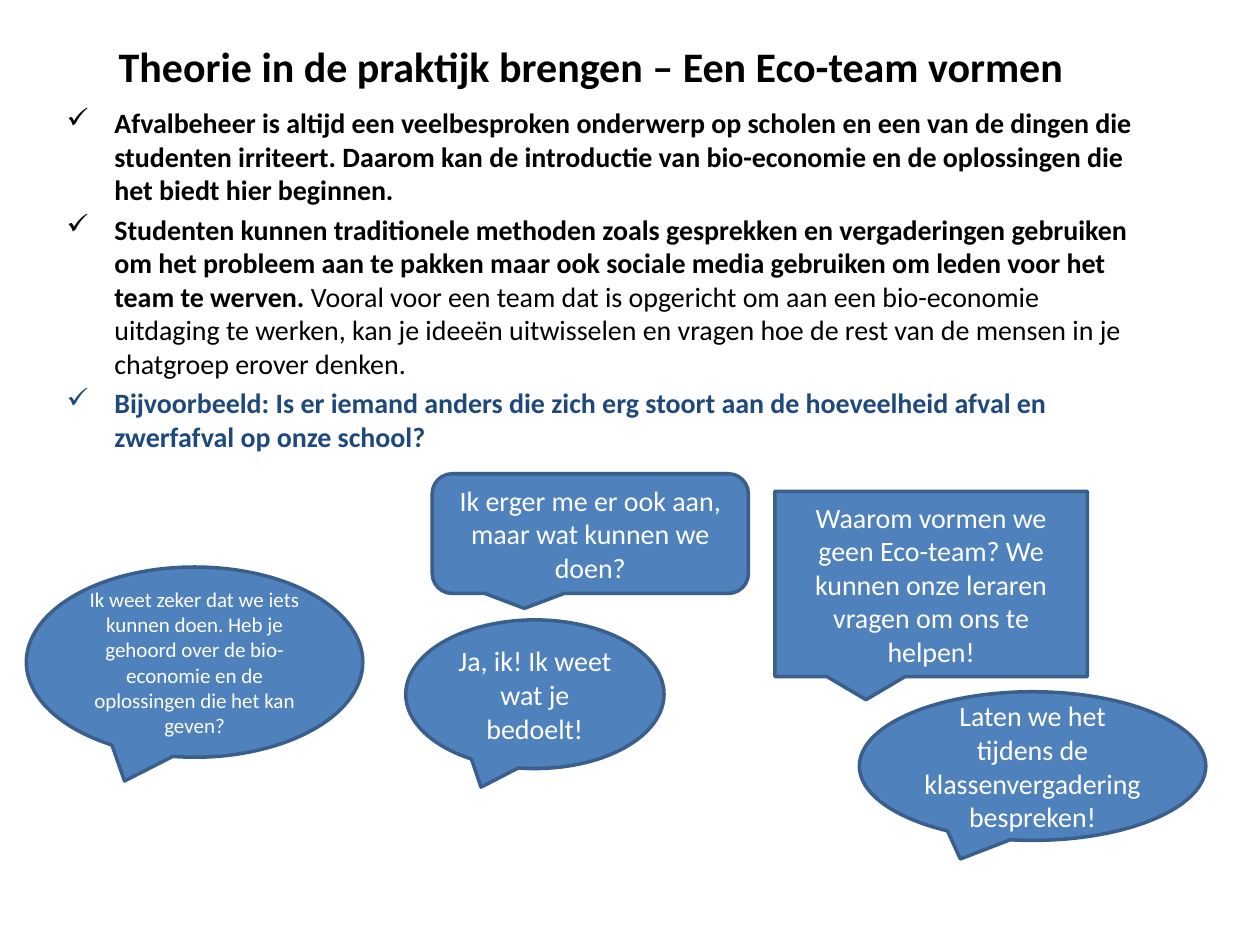
import pptx
import pptx.util
import pptx.dml.color
import pptx.enum.shapes
import pptx.enum.text
import pptx.oxml.ns
import lxml.etree

Inches, Pt = pptx.util.Inches, pptx.util.Pt
RGB = pptx.dml.color.RGBColor
KIND = pptx.enum.shapes.MSO_SHAPE
ALIGN = pptx.enum.text.PP_ALIGN
ANCHOR = pptx.enum.text.MSO_ANCHOR

BLACK = RGB(0x00, 0x00, 0x00)
WHITE = RGB(0xFF, 0xFF, 0xFF)
NAVY = RGB(0x1F, 0x49, 0x7D)
BLUE = RGB(0x4F, 0x81, 0xBD)
EDGE = RGB(0x3A, 0x5F, 0x8C)

TITLE = "Theorie in de praktijk brengen – Een Eco-team vormen"

# Each point is a list of runs: text, bold, colour
POINTS = [
    [("Afvalbeheer is altijd een veelbesproken onderwerp op scholen en een van "
      "de dingen die studenten irriteert. Daarom kan de introductie van "
      "bio-economie en de oplossingen die het biedt hier beginnen.", True, BLACK)],
    [("Studenten kunnen traditionele methoden zoals gesprekken en vergaderingen "
      "gebruiken om het probleem aan te pakken maar ook sociale media gebruiken "
      "om leden voor het team te werven. ", True, BLACK),
     ("Vooral voor een team dat is opgericht om aan een bio-economie uitdaging "
      "te werken, kan je ideeën uitwisselen en vragen hoe de rest van de mensen "
      "in je chatgroep erover denken.", False, BLACK)],
    [("Bijvoorbeeld: Is er iemand anders die zich erg stoort aan de hoeveelheid "
      "afval en zwerfafval op onze school?", True, NAVY)],
]

# Callouts from back to front: shape, box, text size, text
CALLS = [
    (KIND.OVAL_CALLOUT, (3.22, 4.92, 2.05, 1.18), 16,
     "Ja, ik! Ik weet wat je bedoelt!"),
    (KIND.ROUNDED_RECTANGULAR_CALLOUT, (3.43, 3.76, 2.51, 0.95), 16,
     "Ik erger me er ook aan, maar wat kunnen we doen?"),
    (KIND.OVAL_CALLOUT, (6.82, 5.49, 2.75, 1.18), 16,
     "Laten we het tijdens de klassenvergadering bespreken!"),
    (KIND.RECTANGULAR_CALLOUT, (6.15, 3.9, 2.48, 1.47), 16,
     "Waarom vormen we geen Eco-team? We kunnen onze leraren vragen om ons te helpen!"),
    (KIND.OVAL_CALLOUT, (0.21, 4.5, 2.67, 1.51), 12,
     "Ik weet zeker dat we iets kunnen doen. Heb je gehoord over de bio-economie "
     "en de oplossingen die het kan geven?"),
]


def write(para, text, size=16, color=BLACK, bold=False, align=None):
    """Add one formatted run to a paragraph."""
    if align is not None:
        para.alignment = align
    run = para.add_run()
    run.text = text
    font = run.font
    font.name, font.size, font.bold = "Calibri", Pt(size), bold
    font.color.rgb = color


def check(para, indent):
    """Give a paragraph a hanging check mark."""
    props = para._p.get_or_add_pPr()
    props.set("marL", str(indent))
    props.set("indent", str(-indent))
    mark = lxml.etree.SubElement(props, pptx.oxml.ns.qn("a:buChar"))
    mark.set("char", "✓")


def frame(slide, box):
    """Add a wrapping text box and return its text frame."""
    body = slide.shapes.add_textbox(*map(Inches, box)).text_frame
    body.word_wrap = True
    return body


def title(slide, box):
    head = frame(slide, box)
    head.vertical_anchor = ANCHOR.MIDDLE
    write(head.paragraphs[0], TITLE, size=24, bold=True, align=ALIGN.CENTER)


def points(slide, box):
    body = frame(slide, box)
    for num, runs in enumerate(POINTS):
        para = body.add_paragraph() if num else body.paragraphs[0]
        check(para, Inches(0.38))
        if num:
            para.space_before = Pt(3.2)
        for text, bold, color in runs:
            write(para, text, bold=bold, color=color)


def call(slide, kind, box, size, text):
    shape = slide.shapes.add_shape(kind, *map(Inches, box))
    shape.shadow.inherit = False
    shape.fill.solid()
    shape.fill.fore_color.rgb = BLUE
    shape.line.color.rgb = EDGE
    shape.line.width = Pt(2)
    body = shape.text_frame
    body.word_wrap = True
    body.vertical_anchor = ANCHOR.MIDDLE
    write(body.paragraphs[0], text, size=size, color=WHITE, align=ALIGN.CENTER)


def main():
    deck = pptx.Presentation()
    deck.slide_width, deck.slide_height = Inches(10), Inches(7.5)
    slide = deck.slides.add_slide(deck.slide_layouts[6])
    title(slide, (0.44, -0.1, 8.5, 1.25))
    points(slide, (0.43, 0.79, 8.66, 5.91))
    for item in CALLS:
        call(slide, *item)
    deck.save("out.pptx")


if __name__ == "__main__":
    main()
